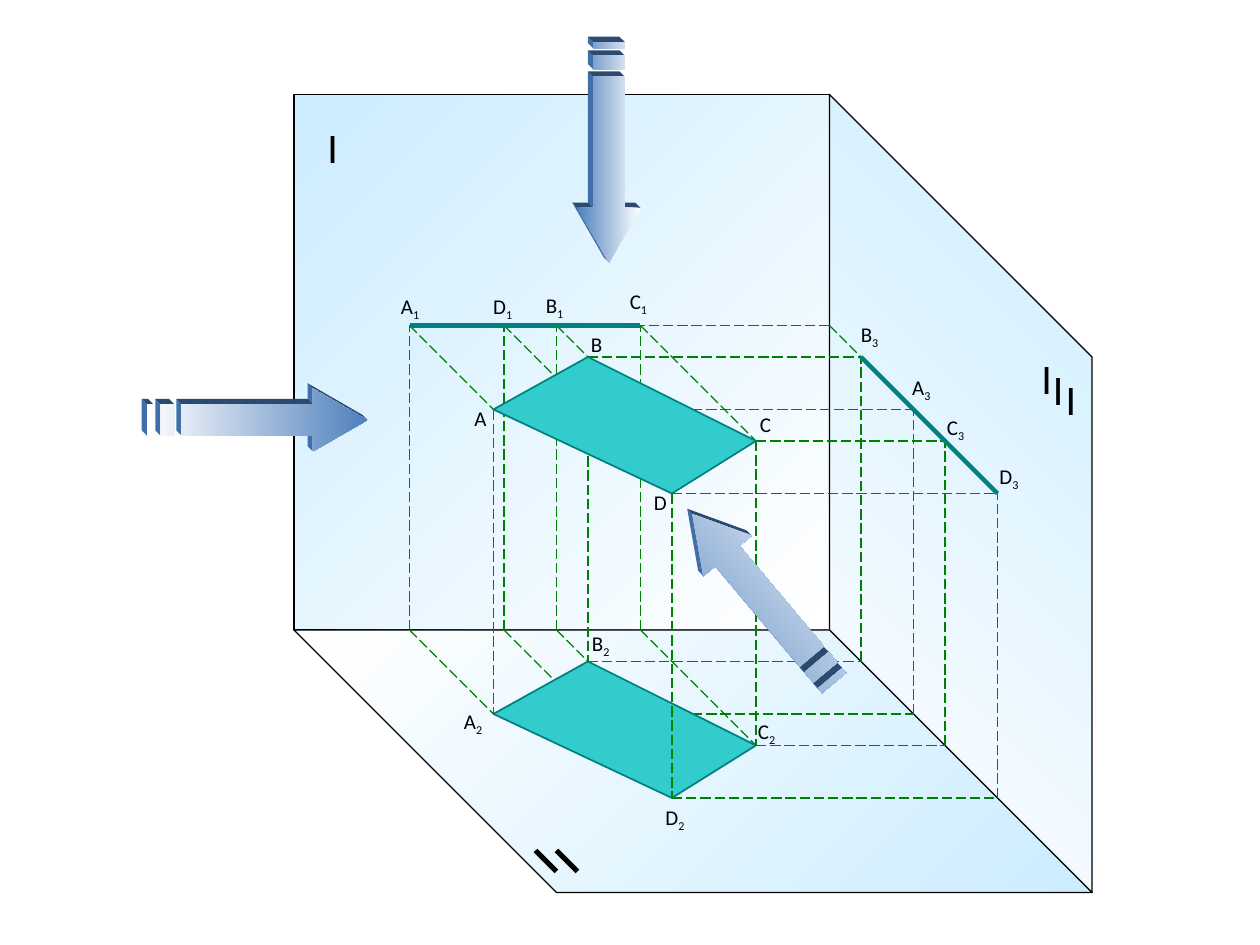
from dataclasses import dataclass
from math import cos, radians, sin

from lxml.etree import SubElement
from pptx import Presentation
from pptx.dml.color import RGBColor
from pptx.enum.dml import MSO_LINE
from pptx.enum.shapes import MSO_CONNECTOR
from pptx.enum.text import MSO_ANCHOR, MSO_AUTO_SIZE as AUTO
from pptx.oxml.ns import qn
from pptx.util import Pt

PX = 7620  # EMU in one px: 120 px to the inch


class Theme:
    INK, GUIDE, EDGE, PLATE = "000000", "008000", "008080", "33CCCC"
    WHITE, SKY, ARROW = "FFFFFF", "CCECFF", "4F81BD"
    ARROW_TOP, ARROW_SIDE = "2C4A70", "4170A8"
    LABEL = dict(name="Calibri", size=Pt(12))
    NUMERAL = dict(name="Calibri", size=Pt(24))
    OUTLINE = dict(width=Pt(0.75))
    PLATE_LINE = dict(width=Pt(1))
    DASHED = dict(width=Pt(0.75), dash_style=MSO_LINE.LONG_DASH)
    TRACE = dict(width=Pt(2.5))
    STROKE = dict(width=Pt(3))


@dataclass
class Room:
    """Box of the front wall, with the point positions it implies."""
    x: int
    y: int
    side: int
    depth: int
    level: int  # height of the plate below the top of the front wall
    drop: int   # distance from the plate to its floor view

    def views(self, across, back):
        x, y = self.x + across, self.y + self.level
        fold = self.x + self.side + back
        return {"": (x + back, y + back),
                "1": (x, y),
                "2": (x + back, y + back + self.drop),
                "3": (fold, y + back),
                "front foot": (x, self.y + self.side),
                "fold foot": (fold, self.y + self.side + back)}


# Distance along the front wall, and distance out from it
CORNERS = {"A": (110, 80), "B": (250, 30), "C": (330, 110), "D": (200, 160)}

# Label box offsets from the labelled point, by view and corner
LABELS = {
    "1": {"A": (-20, -35), "B": (-22, -36), "C": (-22, -40), "D": (-22, -35)},
    "2": {"A": (-40, -10), "B": (-8, -34), "C": (-10, -30), "D": (-18, 2)},
    "3": {"B": (-12, -38), "A": (-13, -38), "C": (-10, -30), "D": (-10, -33)},
    "": {"A": (-30, -10), "B": (-9, -30), "C": (-8, -34), "D": (-29, -10)},
}


def emu(*lengths):
    return [round(v * PX) for v in lengths]


def rgb(color):
    return RGBColor.from_string(color)


def apply(target, values):
    for name, value in values.items():
        setattr(target, name, value)


def add_line(s, start, end, color, values):
    c = s.shapes.add_connector(MSO_CONNECTOR.STRAIGHT, *emu(*start, *end))
    c.line.color.rgb = rgb(color)
    apply(c.line, values)
    SubElement(c._element.spPr, qn("a:effectLst"))


def add_outline(s, contours, fill, angle=None, line=None, values=None):
    """Closed freeform; fill is one colour, or two with a clockwise angle."""
    fb = s.shapes.build_freeform(*emu(*contours[0][0]), scale=1)
    for i, points in enumerate(contours):
        if i:
            fb.move_to(*emu(*points[0]))
        fb.add_line_segments([emu(*p) for p in points[1:]], close=True)
    sp = fb.convert_to_shape()
    sp.shadow.inherit = False
    if angle is None:
        sp.fill.solid()
        sp.fill.fore_color.rgb = rgb(fill)
    else:
        sp.fill.gradient()
        sp.fill.gradient_angle = -angle % 360
        for stop, color, position in zip(sp.fill.gradient_stops, fill, (0, 1)):
            stop.color.rgb = rgb(color)
            stop.position = position
    if line:
        sp.line.color.rgb = rgb(line)
        apply(sp.line, values)
    else:
        sp.line.fill.background()
    return sp


def add_text(s, box, text, font, sub="", **frame):
    tf = s.shapes.add_textbox(*emu(*box)).text_frame
    apply(tf, dict(auto_size=AUTO.SHAPE_TO_FIT_TEXT, word_wrap=True) | frame)
    for part in filter(None, (text, sub)):
        r = tf.paragraphs[0].add_run()
        r.text = part
        apply(r.font, font)
        r.font.color.rgb = rgb(Theme.INK)
    if sub:
        r._r.get_or_add_rPr().set("baseline", "-25000")


def add_walls(s, room):
    x, y, n, d = room.x, room.y, room.side, room.depth
    right, base = x + n, y + n
    fading, growing = (Theme.SKY, Theme.WHITE), (Theme.WHITE, Theme.SKY)
    edge = dict(line=Theme.INK, values=Theme.OUTLINE)
    # Front wall, I
    add_outline(s, [[(x, y), (right, y), (right, base), (x, base)]],
                fading, 45, **edge)
    add_text(s, (x + 20, y + 20, 30, 60), "I", Theme.NUMERAL)
    # Side wall, III
    add_outline(s, [[(right + d, base + d), (right + d, y + d), (right, y),
                     (right, base)]], growing, 315, **edge)
    for dx, dy in ((190, 240), (201, 250), (213, 260)):
        add_text(s, (right + dx, y + dy, 30, 60), "I", Theme.NUMERAL)
    # Floor, II
    add_outline(s, [[(x, base), (right, base), (right + d, base + d),
                     (x + d, base + d)]], growing, 45, **edge)
    for dx in (230, 250):
        start = x + dx, base + 210
        add_line(s, start, (start[0] + 20, start[1] + 20),
                 Theme.INK, Theme.STROKE)


def add_guides(s, points, *pairs):
    for first, last in pairs:
        for views in points.values():
            add_line(s, views[first], views[last], Theme.GUIDE, Theme.DASHED)


def add_plate(s, points, view):
    add_outline(s, [[points[k][view] for k in "ABCD"]], Theme.PLATE,
                line=Theme.EDGE, values=Theme.PLATE_LINE)


def add_labels(s, points, view):
    for corner, (dx, dy) in LABELS[view].items():
        x, y = points[corner][view]
        add_text(s, (x + dx, y + dy, 50 if view else 38, 36), corner,
                 Theme.LABEL, view, vertical_anchor=MSO_ANCHOR.MIDDLE,
                 word_wrap=bool(view))


def add_projection(s, room):
    points = {k: room.views(*v) for k, v in CORNERS.items()}
    # Guides on the floor and side wall, with the fold at the plate's level
    add_guides(s, points, ("2", "fold foot"))
    fold = room.x + room.side, room.y + room.level
    for end in (points["C"]["1"], points["D"]["3"]):
        add_line(s, fold, end, Theme.GUIDE, Theme.DASHED)
    add_guides(s, points, ("fold foot", "3"), ("", "3"), ("1", ""))
    for view in "123":
        add_labels(s, points, view)
    # Front wall guides, then the floor view and the plate above it
    add_guides(s, points, ("front foot", "1"), ("front foot", "2"))
    add_plate(s, points, "2")
    add_guides(s, points, ("", "2"))
    add_plate(s, points, "")
    add_labels(s, points, "")
    # Edge-on views
    for first, last, view in (("B", "D", "3"), ("A", "C", "1")):
        add_line(s, points[first][view], points[last][view],
                 Theme.EDGE, Theme.TRACE)


def add_arrow(s, box, turn, colors, angle):
    """Striped arrow with raised sides, pointing right before its turn."""
    x, y, w, h = box
    top, bottom, neck = h / 4, h * 3 / 4, w - 52
    contours = [[(neck, 0), (neck, top), (33, top), (33, bottom),
                 (neck, bottom), (neck, h), (w, h / 2)]]
    contours += [[(a, top), (a, bottom), (b, bottom), (b, top)]
                 for a, b in ((13, 26), (0, 6))]
    ca, sa = cos(radians(turn)), sin(radians(turn))

    def turned(p):
        dx, dy = p[0] - w / 2, p[1] - h / 2
        return (x + w / 2 + dx * ca - dy * sa, y + h / 2 + dx * sa + dy * ca)

    # Sides that face up and left
    rise = -5
    sides = {Theme.ARROW_SIDE: [], Theme.ARROW_TOP: []}
    for contour in contours:
        ring = [turned(p) for p in contour]
        for (ax, ay), (bx, by) in zip(ring, ring[1:] + ring[:1]):
            nx, ny = ay - by, bx - ax
            if nx + ny < -0.01:
                tone = Theme.ARROW_TOP if abs(ny) > abs(nx) else Theme.ARROW_SIDE
                sides[tone].append([(ax, ay), (bx, by), (bx + rise, by + rise),
                                    (ax + rise, ay + rise)])
    for tone, quads in sides.items():
        add_outline(s, quads, tone)
    # Face
    face = [[(x + px, y + py) for px, py in c] for c in contours]
    add_outline(s, face, colors, angle).rotation = turn


def main():
    prs = Presentation()
    prs.slide_width, prs.slide_height = emu(1200, 900)
    s = prs.slides.add_slide(prs.slide_layouts[6])
    room = Room(x=280, y=90, side=510, depth=250, level=220, drop=290)
    add_walls(s, room)
    add_projection(s, room)
    # Directions of view
    light, dark = (Theme.WHITE, Theme.ARROW), (Theme.ARROW, Theme.WHITE)
    add_arrow(s, (140, 370, 210, 60), 0, light, 0)
    add_arrow(s, (622, 540, 210, 60), 230, dark, 90)
    add_arrow(s, (475, 115, 210, 60), 90, light, 90)
    prs.save("out.pptx")


if __name__ == "__main__":
    main()
